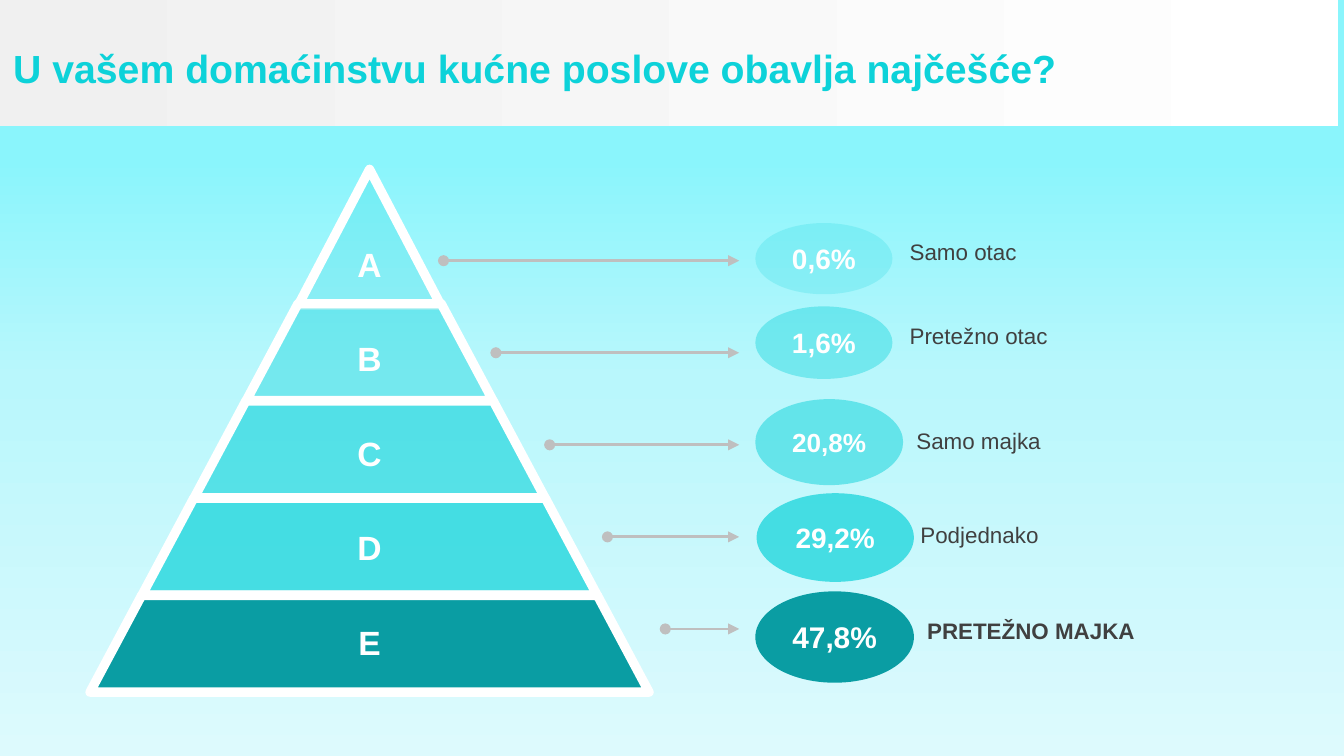
from lxml import etree
from pptx import Presentation
from pptx.dml.color import RGBColor
from pptx.enum.shapes import MSO_CONNECTOR as Connector, MSO_SHAPE as Shape
from pptx.enum.text import MSO_ANCHOR as Anchor, PP_ALIGN as Align
from pptx.oxml.ns import qn
from pptx.util import Inches, Pt

COLORS = {
    "accent": "0DD2D9", "dark": "0A9DA3", "white": "FFFFFF",
    "text": "404040", "arrow": "BFBFBF",
}
BACKGROUND = [(21, "8AF5FC"), (50, "B9F7FC"), (100, "DDFAFD")]
BAND = [(0, "F0F0F0"), (100, "FFFFFF")]

TITLE = "U vašem domaćinstvu kućne poslove obavlja najčešće?"
ANSWERS = [
    dict(letter="A", label="Samo otac", label_at=(6.67, 1.72), arrow_start=3.3, tier_alpha=20,
         share="0,6%", size=15, oval=(5.62, 1.66, 1.02, 0.53), oval_alpha=20),
    dict(letter="B", label="Pretežno otac", label_at=(6.67, 2.35), arrow_start=3.69, tier_alpha=40,
         share="1,6%", size=15, oval=(5.62, 2.28, 1.02, 0.54), oval_alpha=40),
    dict(letter="C", label="Samo majka", label_at=(6.72, 3.13), arrow_start=4.09, tier_alpha=60,
         share="20,8%", size=14, oval=(5.62, 2.97, 1.1, 0.64), oval_alpha=50),
    dict(letter="D", label="Podjednako", label_at=(6.75, 3.83), arrow_start=4.52, tier_alpha=70,
         share="29,2%", size=15, oval=(5.63, 3.67, 1.17, 0.66), oval_alpha=70),
    dict(letter="E", label="PRETEŽNO MAJKA", label_at=(6.8, 4.54), arrow_start=4.95, tier_alpha=100,
         share="47,8%", size=16, oval=(5.62, 4.4, 1.18, 0.68), oval_alpha=100),
]
GAPS = len(ANSWERS) - 1
AXIS = 2.75
PEAK_TOP, PEAK_HEIGHT, TIER_HEIGHT = 1.26, 1.01, 0.72
SECOND_TOP, BASE_TOP = 2.26, 4.43
PEAK_WIDTH, BASE_WIDTH = 1.06, 4.16
FIRST_ARROW, LAST_ARROW, ARROW_END = 1.94, 4.68, 5.5
FIRST_LETTER, LAST_LETTER = 1.79, 4.6


def rgb(name):
    return RGBColor.from_string(COLORS[name])


def spread(first, last, index, gaps=GAPS):
    return first + (last - first) * index / gaps


def set_gradient(fill, element, stops, angle):
    fill.gradient()
    fill.gradient_angle = angle
    stop_list = element.find(".//" + qn("a:gsLst"))
    for stop in list(stop_list):
        stop_list.remove(stop)
    for position, color in stops:
        stop = etree.SubElement(stop_list, qn("a:gs"), pos=str(position * 1000))
        etree.SubElement(stop, qn("a:srgbClr"), val=color)


def write(shape, text, size, color, bold=False, align=Align.LEFT, anchor=Anchor.MIDDLE, wrap=True):
    frame = shape.text_frame
    frame.text = text
    frame.word_wrap = wrap
    frame.vertical_anchor = anchor
    paragraph = frame.paragraphs[0]
    paragraph.alignment = align
    font = paragraph.runs[0].font
    font.name, font.size, font.bold = "Arial", Pt(size), bold
    font.color.rgb = rgb(color)


def add_text(slide, box, *args, **kwargs):
    write(slide.shapes.add_textbox(*map(Inches, box)), *args, **kwargs)


def add_tinted(slide, kind, box, alpha):
    shape = slide.shapes.add_shape(kind, *map(Inches, box))
    shape.shadow.inherit = False
    shape.fill.solid()
    shape.fill.fore_color.rgb = rgb("dark" if alpha == 100 else "accent")
    shape.line.fill.background()
    if alpha < 100:
        tint = shape.element.spPr.find(qn("a:solidFill")).find(qn("a:srgbClr"))
        etree.SubElement(tint, qn("a:alpha"), val=str(alpha * 1000))
    return shape


def add_arrow(slide, start, end, y):
    arrow = slide.shapes.add_connector(Connector.STRAIGHT, *map(Inches, (start, y, end, y)))
    arrow.line.color.rgb = rgb("arrow")
    arrow.line.width = Pt(1.5)
    line = arrow.element.spPr.find(qn("a:ln"))
    etree.SubElement(line, qn("a:headEnd"), type="oval")
    etree.SubElement(line, qn("a:tailEnd"), type="triangle")
    etree.SubElement(arrow.element.spPr, qn("a:effectLst"))


def add_tier(slide, index, alpha):
    width = spread(PEAK_WIDTH, BASE_WIDTH, index)
    height = TIER_HEIGHT if index else PEAK_HEIGHT
    top = spread(SECOND_TOP, BASE_TOP, index - 1, GAPS - 1) if index else PEAK_TOP
    tier = add_tinted(slide, Shape.TRAPEZOID, (AXIS - width / 2, top, width, height), alpha)
    tier.adjustments[0] = 0.534
    tier.line.color.rgb = rgb("white")
    tier.line.width = Pt(5)
    etree.SubElement(tier.element.spPr.find(qn("a:ln")), qn("a:round"))


def main():
    deck = Presentation()
    deck.slide_width = Inches(10)
    deck.slide_height = deck.slide_width * 9 // 16
    slide = deck.slides.add_slide(deck.slide_layouts[6])
    set_gradient(slide.background.fill, slide.element, BACKGROUND, 270)

    band = slide.shapes.add_shape(Shape.RECTANGLE, 0, 0, Inches(9.96), Inches(0.94))
    band.shadow.inherit = False
    band.line.fill.background()
    set_gradient(band.fill, band.element, BAND, 0)
    add_text(slide, (0, 0.08, 10, 0.85), TITLE, 21, "accent", bold=True)

    for index, answer in enumerate(ANSWERS):
        oval = add_tinted(slide, Shape.OVAL, answer["oval"], answer["oval_alpha"])
        write(oval, answer["share"], answer["size"], "white", bold=True, align=Align.CENTER, wrap=False)
        add_arrow(slide, answer["arrow_start"], ARROW_END, spread(FIRST_ARROW, LAST_ARROW, index))
        add_text(slide, (*answer["label_at"], 3.1, 0.3), answer["label"], 12, "text",
                 bold=answer["letter"] == "E", anchor=Anchor.TOP)
        add_tier(slide, index, answer["tier_alpha"])

    for index, answer in enumerate(ANSWERS):
        add_text(slide, (AXIS - 0.19, spread(FIRST_LETTER, LAST_LETTER, index), 0.38, 0.35),
                 answer["letter"], 18, "white", bold=True, align=Align.CENTER)

    deck.save("out.pptx")


if __name__ == "__main__":
    main()
